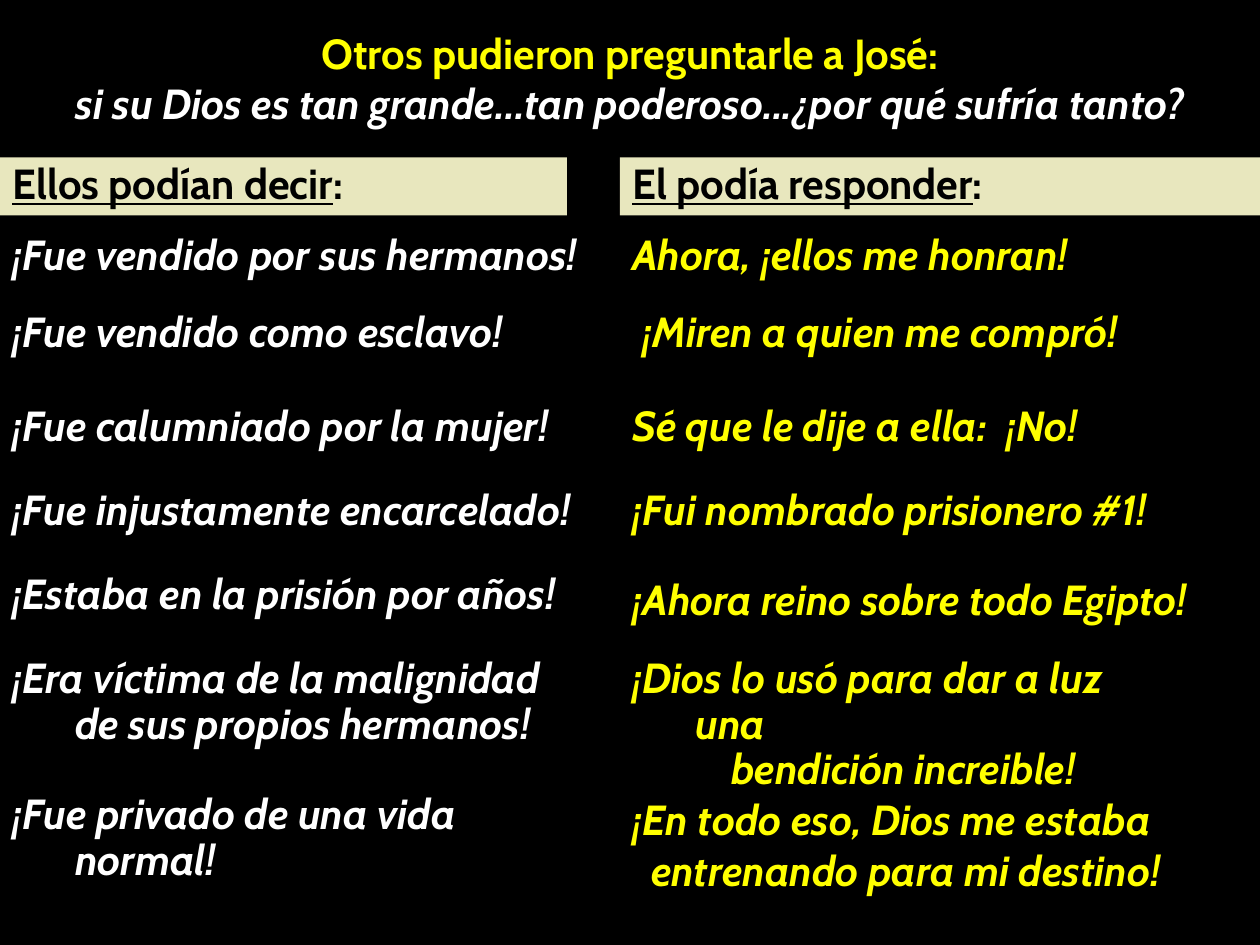
import pptx
import pptx.dml.color
import pptx.enum.shapes
import pptx.enum.text
import pptx.util

Inches = pptx.util.Inches
ALIGN = pptx.enum.text.PP_ALIGN
COLORS = {"black": "000000", "white": "FFFFFF", "yellow": "FFFF00", "cream": "E8E7BE"}
LEFT, RIGHT = 0, 4.92
HANGING = 0.5


def rgb(name):
    return pptx.dml.color.RGBColor.from_string(COLORS[name])


def add_paragraph(frame, text, color="white", italic=True, underline=False,
                  align=ALIGN.LEFT, spacing=0.9, first_line=0, ending=""):
    """Fill the empty first paragraph or append one; ending is never underlined."""
    para = frame.paragraphs[0]
    if para.runs:
        para = frame.add_paragraph()
    para.alignment = align
    para.line_spacing = spacing
    properties = para._p.get_or_add_pPr()
    properties.set("marL", str(Inches(HANGING)))
    properties.set("indent", str(Inches(first_line - HANGING)))
    for words, underlined in ((text, underline), (ending, False)):
        if words:
            span = para.add_run()
            span.text = words
            span.font.name = "Cabin"
            span.font.size = pptx.util.Pt(24)
            span.font.bold = True
            span.font.italic = italic
            span.font.underline = underlined
            span.font.color.rgb = rgb(color)


class SlideBuilder:
    def __init__(self, slide):
        self.slide = slide
        slide.background.fill.solid()
        slide.background.fill.fore_color.rgb = rgb("black")

    def text_box(self, left, top, width, height):
        box = self.slide.shapes.add_textbox(
            Inches(left), Inches(top), Inches(width), Inches(height))
        box.text_frame.word_wrap = True
        return box.text_frame

    def heading(self, left, width, text):
        bar = self.slide.shapes.add_shape(
            pptx.enum.shapes.MSO_SHAPE.RECTANGLE,
            Inches(left), Inches(1.25), Inches(width), Inches(0.46))
        bar.shadow.inherit = False
        bar.fill.solid()
        bar.fill.fore_color.rgb = rgb("cream")
        bar.line.fill.background()
        bar.text_frame.word_wrap = True
        bar.text_frame.vertical_anchor = pptx.enum.text.MSO_ANCHOR.TOP
        add_paragraph(bar.text_frame, text, color="black", italic=False,
                      underline=True, ending=":")

    def statement(self, left, top, width, text, height=0.46, **style):
        frame = self.text_box(left, top, width, height)
        add_paragraph(frame, text, **style)
        return frame


# top, accusation, its width, answer, its left and width
ROWS = [
    (1.81, "¡Fue vendido por sus hermanos!", 4.75, "Ahora, ¡ellos me honran!", RIGHT, 3.75),
    (2.42, "¡Fue vendido como esclavo!", 4.17, "¡Miren a quien me compró!", 5, 4.25),
    (3.17, "¡Fue calumniado por la mujer!", 4.83, "Sé que le dije a ella:  ¡No!", RIGHT, 4.83),
    (3.83, "¡Fue injustamente encarcelado!", 4.75, "¡Fui nombrado prisionero #1!", RIGHT, 4.83),
]


def main():
    deck = pptx.Presentation()
    deck.slide_width, deck.slide_height = Inches(10), Inches(7.5)
    page = SlideBuilder(deck.slides.add_slide(deck.slide_layouts[6]))

    title = page.text_box(0, 0.17, 10, 0.9)
    add_paragraph(title, "Otros pudieron preguntarle a José:", color="yellow",
                  italic=False, align=ALIGN.CENTER, spacing=1.0)
    add_paragraph(title, "si su Dios es tan grande...tan poderoso...¿por qué sufría tanto?",
                  align=ALIGN.CENTER, spacing=1.0)

    page.heading(LEFT, 4.5, "Ellos podían decir")
    page.heading(RIGHT, 5.08, "El podía responder")

    for top, accusation, width, answer, answer_left, answer_width in ROWS:
        page.statement(LEFT, top, width, accusation)
        page.statement(answer_left, top, answer_width, answer, color="yellow")

    page.statement(LEFT, 4.5, 4.58, "¡Estaba en la prisión por años!")
    page.statement(RIGHT, 4.5, 4.75, "¡Ahora reino sobre todo Egipto!", height=0.5,
                   color="yellow", spacing=1.0)

    page.statement(LEFT, 5.17, 4.75, "¡Era víctima de la malignidad de sus propios hermanos!",
                   height=0.82)
    blessing = page.statement(RIGHT, 5.17, 4.5, "¡Dios lo usó para dar a luz una",
                              height=0.82, color="yellow")
    add_paragraph(blessing, "bendición increible!", color="yellow", align=ALIGN.CENTER)

    page.statement(LEFT, 6.25, 4.83, "¡Fue privado de una vida normal!")
    destiny = page.statement(RIGHT, 6.25, 5.08, "¡En todo eso, Dios me estaba",
                             height=0.9, color="yellow", spacing=1.0)
    add_paragraph(destiny, "entrenando para mi destino!", color="yellow", spacing=1.0,
                  first_line=0.15)

    deck.save("out.pptx")


if __name__ == "__main__":
    main()
